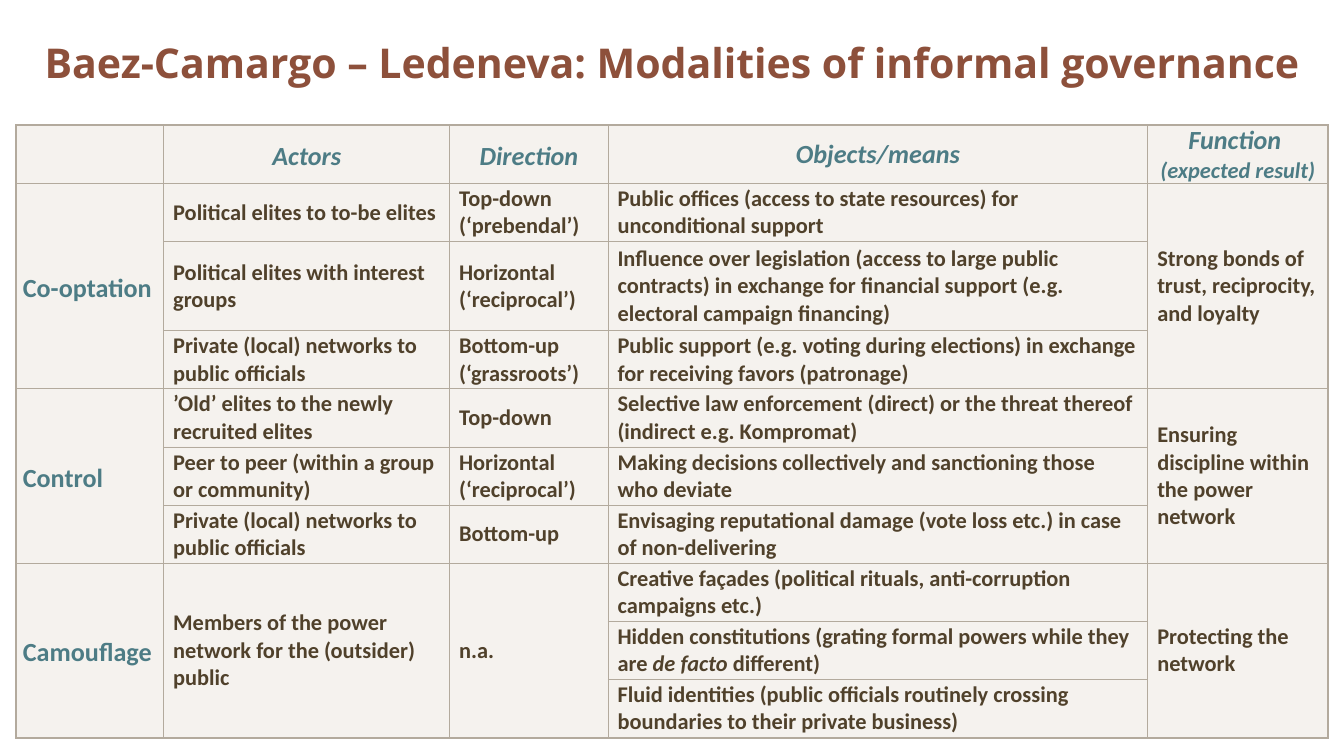
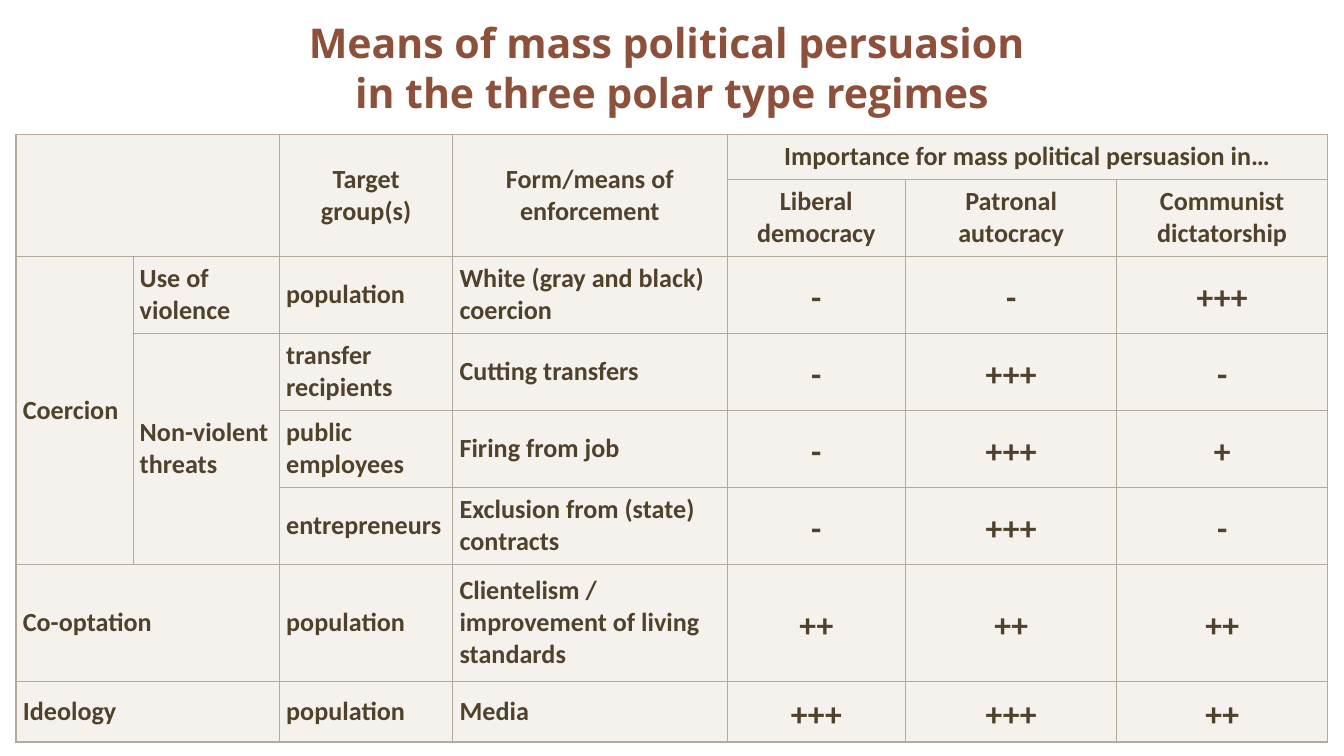
from lxml.etree import SubElement
from pptx import Presentation
from pptx.dml.color import RGBColor
from pptx.enum.text import MSO_ANCHOR, PP_ALIGN
from pptx.oxml.ns import qn
from pptx.util import Inches, Pt

COLORS = {"title": "8D503B", "head": "4D7C85", "body": "50412B",
          "fill": "EFEAE4", "line": "B3AA9D"}
LEFT, WIDTH = 0.12, 9.76
EVEN, FLAT = (0.05,) * 4, (0.07, 0, 0.07, 0)
BLANK = {"inset": (0,) * 4}

TITLE = {"name": "Open Sans", "size": 22, "color": "title", "align": PP_ALIGN.CENTER}
BODY = {"name": "Calibri", "size": 12, "color": "body", "inset": FLAT}
HEAD = {**BODY, "size": 14, "color": "head", "italic": True, "sub_size": 12,
        "inset": (0,) * 4, "align": PP_ALIGN.CENTER}
SPACED_HEAD = {**HEAD, "spacing": 1.15}
MODALITY = {**BODY, "size": 14, "color": "head", "spacing": 1.15, "inset": EVEN}
LABEL = {**BODY, "size": 14, "inset": EVEN}
COLUMN = {**LABEL, "align": PP_ALIGN.CENTER}
RATING = {**COLUMN, "size": 18, "spacing": 1.15}

GOVERNANCE = [
    ["", "Actors", "Direction", "Objects/means", "Function \n(expected result)"],
    ["Co-optation", "Political elites to to-be elites", "Top-down (‘prebendal’)",
     "Public offices (access to state resources) for unconditional support",
     "Strong bonds of trust, reciprocity, and loyalty"],
    ["^", "Political elites with interest groups", "Horizontal (‘reciprocal’)",
     "Influence over legislation (access to large public contracts) in exchange "
     "for financial support (e.g. electoral campaign financing)", "^"],
    ["^", "Private (local) networks to public officials", "Bottom-up (‘grassroots’)",
     "Public support (e.g. voting during elections) in exchange for receiving "
     "favors (patronage)", "^"],
    ["Control", "’Old’ elites to the newly recruited elites", "Top-down",
     "Selective law enforcement (direct) or the threat thereof (indirect e.g. Kompromat)",
     "Ensuring discipline within the power network"],
    ["^", "Peer to peer (within a group or community)", "Horizontal (‘reciprocal’)",
     "Making decisions collectively and sanctioning those who deviate", "^"],
    ["^", "Private (local) networks to public officials", "Bottom-up",
     "Envisaging reputational damage (vote loss etc.) in case of non-delivering", "^"],
    ["Camouflage", "Members of the power network for the (outsider) public", "n.a.",
     "Creative façades (political rituals, anti-corruption campaigns etc.)",
     "Protecting the network"],
    ["^", "^", "^",
     "Hidden constitutions (grating formal powers while they are *de facto* different)", "^"],
    ["^", "^", "^",
     "Fluid identities (public officials routinely crossing boundaries to their "
     "private business)", "^"],
]

PERSUASION = [
    ["", "<", "Target group(s)", "Form/means of enforcement",
     "Importance for mass political persuasion in…", "<", "<"],
    ["^", "<", "^", "^", "Liberal democracy", "Patronal autocracy", "Communist dictatorship"],
    ["Coercion", "Use of violence", "population", "White (gray and black) coercion",
     "-", "-", "+++"],
    ["^", "Non-violent threats", "transfer recipients", "Cutting transfers", "-", "+++", "-"],
    ["^", "^", "public employees", "Firing from job", "-", "+++", "+"],
    ["^", "^", "entrepreneurs", "Exclusion from (state) contracts", "-", "+++", "-"],
    ["Co-optation", "<", "population", "Clientelism / improvement of living standards",
     "++", "++", "++"],
    ["Ideology", "<", "population", "Media", "+++", "+++", "++"],
]


def governance_style(row, col):
    """Pick the text style of a cell in the governance table."""
    if row == 0:
        return SPACED_HEAD if col in (1, 2) else HEAD
    return MODALITY if col == 0 else BODY


def persuasion_style(row, col):
    """Pick the text style of a cell in the persuasion table."""
    if row < 2:
        return COLUMN
    return RATING if col > 3 else LABEL


def add_text_run(p, text, style, size, italic):
    """Add one bold run in the given style."""
    r = p.add_run()
    r.text = text
    font = {"name": style["name"], "size": Pt(size), "bold": True, "italic": italic}
    for key, value in font.items():
        setattr(r.font, key, value)
    r.font.color.rgb = RGBColor.from_string(COLORS[style["color"]])


def write(tf, text, style):
    """Write paragraphs (newline), line breaks (vertical tab) and *italics*."""
    for i, line in enumerate(text.split("\n")):
        p = tf.add_paragraph() if i else tf.paragraphs[0]
        layout = {"alignment": style.get("align", PP_ALIGN.LEFT),
                  "line_spacing": style.get("spacing")}
        for key, value in layout.items():
            setattr(p, key, value)
        size = style.get("sub_size", style["size"]) if i else style["size"]
        for j, part in enumerate(line.split("*")):
            italic = style.get("italic", False) or j % 2 == 1
            for k, piece in enumerate(part.split("\v")):
                if k:
                    p.add_line_break()
                add_text_run(p, piece, style, size, italic)


def add_title(s, text, height):
    """Add a centred title at the top of the slide."""
    tf = s.shapes.add_textbox(Inches(LEFT), 0, Inches(WIDTH), Inches(height)).text_frame
    tf.word_wrap = True
    tf.vertical_anchor = MSO_ANCHOR.MIDDLE
    write(tf, text, TITLE)


def set_borders(cell, weights):
    """Draw the four cell borders with the given point widths."""
    tcPr = cell._tc.get_or_add_tcPr()
    for side, weight in weights.items():
        ln = SubElement(tcPr, qn(f"a:ln{side}"), w=str(Pt(weight)))
        fill = SubElement(ln, qn("a:solidFill"))
        SubElement(fill, qn("a:srgbClr"), val=COLORS["line"])


def set_fill(cell):
    """Fill a cell with the translucent table colour."""
    cell.fill.solid()
    cell.fill.fore_color.rgb = RGBColor.from_string(COLORS["fill"])
    color = cell._tc.tcPr.find(qn("a:solidFill")).find(qn("a:srgbClr"))
    SubElement(color, qn("a:alpha"), val="60000")


def run_length(marks, mark):
    """Count a cell plus the merge marks that directly follow it."""
    n = 1
    for m in marks:
        if m != mark:
            break
        n += 1
    return n


def share(total, parts):
    """Divide a length in proportion to the parts."""
    return [Inches(total * part / sum(parts)) for part in parts]


def add_grid(s, top, height, widths, heights, rows, pick_style):
    """Add a table where < merges to the left and ^ merges upwards."""
    n_rows, n_cols = len(rows), len(widths)
    tbl = s.shapes.add_table(n_rows, n_cols, Inches(LEFT), Inches(top),
                             Inches(WIDTH), Inches(height)).table
    tbl.first_row = tbl.horz_banding = False
    for col, col_width in zip(tbl.columns, share(WIDTH, widths)):
        col.width = col_width
    for row, row_height in zip(tbl.rows, share(height, heights)):
        row.height = row_height
    for i, row in enumerate(rows):
        for j, text in enumerate(row):
            cell = tbl.cell(i, j)
            merged = text in ("<", "^")
            w = 1 if merged else run_length(row[j + 1:], "<")
            h = 1 if merged else run_length([below[j] for below in rows[i + 1:]], "^")
            edges = {"L": j == 0, "R": j + w == n_cols, "T": i == 0, "B": i + h == n_rows}
            set_borders(cell, {side: 1 if outer else 0.5 for side, outer in edges.items()})
            set_fill(cell)
            style = BLANK if merged or not text else pick_style(i, j)
            sides = ("margin_left", "margin_top", "margin_right", "margin_bottom")
            for side, inset in zip(sides, style["inset"]):
                setattr(cell, side, Inches(inset))
            cell.vertical_anchor = MSO_ANCHOR.MIDDLE
            if style is not BLANK:
                write(cell.text_frame, text, style)
            if w * h > 1:
                cell.merge(tbl.cell(i + h - 1, j + w - 1))


def main():
    """Build both slides and save the deck."""
    prs = Presentation()
    prs.slide_width, prs.slide_height = Inches(10), Inches(10 * 9 / 16)
    blank = prs.slide_layouts[6]

    s = prs.slides.add_slide(blank)
    add_title(s, "Baez-Camargo – Ledeneva: Modalities of informal governance", 0.93)
    add_grid(s, 0.93, 4.56, [1.1, 2.13, 1.18, 4.02, 1.34],
             [0.43, 0.43, 0.66] + [0.43] * 7, GOVERNANCE, governance_style)

    s = prs.slides.add_slide(blank)
    add_title(s, "Means of mass political persuasion \vin the three polar type regimes", 1)
    add_grid(s, 1, 4.52, [0.87, 1.09, 1.29, 2.04, 1.33, 1.57, 1.57],
             [0.33] + [0.57] * 5 + [0.87, 0.45], PERSUASION, persuasion_style)

    prs.save("out.pptx")


if __name__ == "__main__":
    main()
